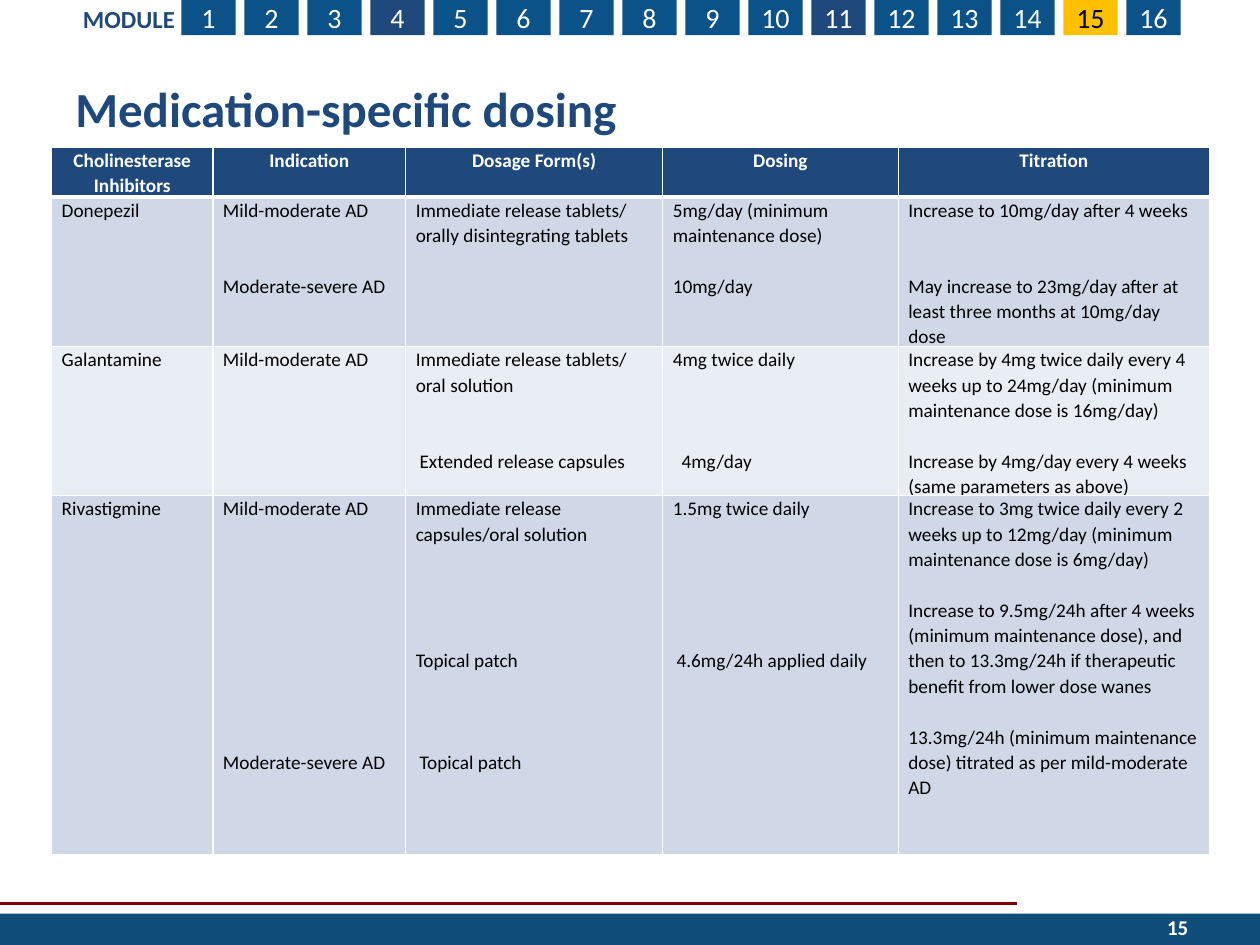
from lxml import etree
from pptx import Presentation
from pptx.dml.color import RGBColor
from pptx.enum.shapes import MSO_CONNECTOR, MSO_SHAPE
from pptx.enum.text import MSO_ANCHOR, PP_ALIGN
from pptx.oxml.ns import qn
from pptx.util import Inches, Pt

RECT = MSO_SHAPE.RECTANGLE
MIDDLE, TOP = MSO_ANCHOR.MIDDLE, MSO_ANCHOR.TOP
LEFT, CENTER, RIGHT = PP_ALIGN.LEFT, PP_ALIGN.CENTER, PP_ALIGN.RIGHT

FONT = "Calibri"
NAVY, BLUE, FOOTER_BLUE = "1F497D", "0A5287", "0F4D7B"
GOLD, MAROON, WHITE, BLACK = "FFC000", "800000", "FFFFFF", "000000"
BANDS = ["D0D8E8", "E9EDF4"]

TAB_COLORS = {4: NAVY, 11: NAVY, 15: GOLD}
TAB_TEXT_COLORS = {15: BLACK}

LINE_PT = 14.5
COL_WIDTHS = [1.28, 1.53, 2.04, 1.87, 2.47]
ROW_HEIGHTS = [0.35, 1.07, 1.07, 2.85]
HEADERS = ["Cholinesterase Inhibitors", "Indication", "Dosage Form(s)", "Dosing", "Titration"]

# Each cell is a list of (text, lines skipped above, left indent in inches).
DRUGS = [
    [
        [("Donepezil", 0, 0)],
        [("Mild-moderate AD", 0, 0), ("Moderate-severe AD", 2, 0)],
        [("Immediate release tablets/ orally disintegrating tablets", 0, 0)],
        [("5mg/day (minimum maintenance dose)", 0, 0), ("10mg/day", 1, 0)],
        [("Increase to 10mg/day after 4 weeks", 0, 0),
         ("May increase to 23mg/day after at least three months at 10mg/day dose", 2, 0)],
    ],
    [
        [("Galantamine", 0, 0)],
        [("Mild-moderate AD", 0, 0)],
        [("Immediate release tablets/ oral solution", 0, 0),
         ("Extended release capsules", 2, 0.03)],
        [("4mg twice daily", 0, 0), ("4mg/day", 3, 0.07)],
        [("Increase by 4mg twice daily every 4 weeks up to 24mg/day "
          "(minimum maintenance dose is 16mg/day)", 0, 0),
         ("Increase by 4mg/day every 4 weeks (same parameters as above)", 1, 0)],
    ],
    [
        [("Rivastigmine", 0, 0)],
        [("Mild-moderate AD", 0, 0), ("Moderate-severe AD", 9, 0)],
        [("Immediate release capsules/oral solution", 0, 0),
         ("Topical patch", 4, 0), ("Topical patch", 3, 0.03)],
        [("1.5mg twice daily", 0, 0), ("4.6mg/24h applied daily", 5, 0.03)],
        [("Increase to 3mg twice daily every 2 weeks up to 12mg/day "
          "(minimum maintenance dose is 6mg/day)", 0, 0),
         ("Increase to 9.5mg/24h after 4 weeks (minimum maintenance dose), and then "
          "to 13.3mg/24h if therapeutic benefit from lower dose wanes", 1, 0),
         ("13.3mg/24h (minimum maintenance dose) titrated as per mild-moderate AD", 1, 0)],
    ],
]


def rgb(color):
    return RGBColor.from_string(color)


def style_paragraph(p, size, color, bold=False, align=LEFT):
    p.alignment = align
    for r in p.runs:
        r.font.name = FONT
        r.font.size = Pt(size)
        r.font.bold = bold
        r.font.color.rgb = rgb(color)


def add_text(s, box, text, size, color, align=LEFT, anchor=MIDDLE, wrap=True):
    tf = s.shapes.add_textbox(*map(Inches, box)).text_frame
    tf.word_wrap = wrap
    tf.vertical_anchor = anchor
    tf.text = text
    style_paragraph(tf.paragraphs[0], size, color, True, align)


def add_rect(s, box, fill):
    sp = s.shapes.add_shape(RECT, *map(Inches, box))
    sp.shadow.inherit = False
    sp.fill.solid()
    sp.fill.fore_color.rgb = rgb(fill)
    sp.line.fill.background()
    return sp


def add_module_bar(s, left, top, count=16, pitch=0.5):
    add_text(s, (left, top - 0.02, 1.01, 0.34), "MODULE", 14, NAVY, anchor=TOP, wrap=False)
    for number in range(1, count + 1):
        tab_left = left + 0.88 + (number - 1) * pitch
        tab = add_rect(s, (tab_left, top, 0.43, 0.28), TAB_COLORS.get(number, BLUE))
        tf = tab.text_frame
        tf.word_wrap = False
        tf.vertical_anchor = MIDDLE
        tf.text = str(number)
        style_paragraph(tf.paragraphs[0], 16, TAB_TEXT_COLORS.get(number, WHITE), align=CENTER)


def add_footer(s, top, page):
    rule_y = Inches(top - 0.08)
    rule = s.shapes.add_connector(MSO_CONNECTOR.STRAIGHT, Inches(-0.01), rule_y,
                                  Inches(8.07), rule_y)
    rule.line.color.rgb = rgb(MAROON)
    rule.line.width = Pt(1.5)
    etree.SubElement(rule._element.spPr, qn("a:effectLst"))
    add_rect(s, (0, top, 10, 0.25), FOOTER_BLUE)
    add_text(s, (7.2, top - 0.09, 2.33, 0.4), page, 12, WHITE, RIGHT)


def set_borders(cell, **widths):
    """Draw white cell borders; widths are points keyed by L, R, T and B."""
    tcPr = cell._tc.get_or_add_tcPr()
    for side in "LRTB":
        ln = etree.SubElement(tcPr, qn(f"a:ln{side}"), w=str(Pt(widths.get(side, 1))))
        fill = etree.SubElement(ln, qn("a:solidFill"))
        etree.SubElement(fill, qn("a:srgbClr"), val=WHITE)


def fill_cell(cell, entries, fill, color, bold, align):
    cell.margin_left = cell.margin_right = Inches(0.08)
    cell.margin_top = cell.margin_bottom = 0
    cell.fill.solid()
    cell.fill.fore_color.rgb = rgb(fill)
    tf = cell.text_frame
    for i, (text, skipped, indent) in enumerate(entries):
        p = tf.paragraphs[0] if i == 0 else tf.add_paragraph()
        p.text = text
        p.line_spacing = 1.07
        if skipped:
            p.space_before = Pt(skipped * LINE_PT)
        if indent:
            p._p.get_or_add_pPr().set("marL", str(Inches(indent)))
        style_paragraph(p, 11, color, bold, align)


def add_dosing_table(s, left, top):
    table = s.shapes.add_table(
        len(ROW_HEIGHTS), len(COL_WIDTHS), Inches(left), Inches(top),
        Inches(sum(COL_WIDTHS)), Inches(sum(ROW_HEIGHTS))).table
    for column, width in zip(table.columns, COL_WIDTHS):
        column.width = Inches(width)
    for row, height in zip(table.rows, ROW_HEIGHTS):
        row.height = Inches(height)
    for c, header in enumerate(HEADERS):
        cell = table.cell(0, c)
        set_borders(cell, B=3)
        fill_cell(cell, [(header, 0, 0)], NAVY, WHITE, True, CENTER)
    for r, drug in enumerate(DRUGS, start=1):
        for c, entries in enumerate(drug):
            cell = table.cell(r, c)
            set_borders(cell, T=3 if r == 1 else 1)
            fill_cell(cell, entries, BANDS[(r - 1) % 2], BLACK, False, LEFT)


def main():
    prs = Presentation()
    prs.slide_width, prs.slide_height = Inches(10), Inches(7.5)
    s = prs.slides.add_slide(prs.slide_layouts[6])
    add_footer(s, 7.25, "15")
    add_module_bar(s, 0.56, 0)
    add_text(s, (0.5, 0.62, 9, 0.47), "Medication-specific dosing", 28, NAVY)
    add_dosing_table(s, 0.41, 1.17)
    prs.save("out.pptx")


if __name__ == "__main__":
    main()
